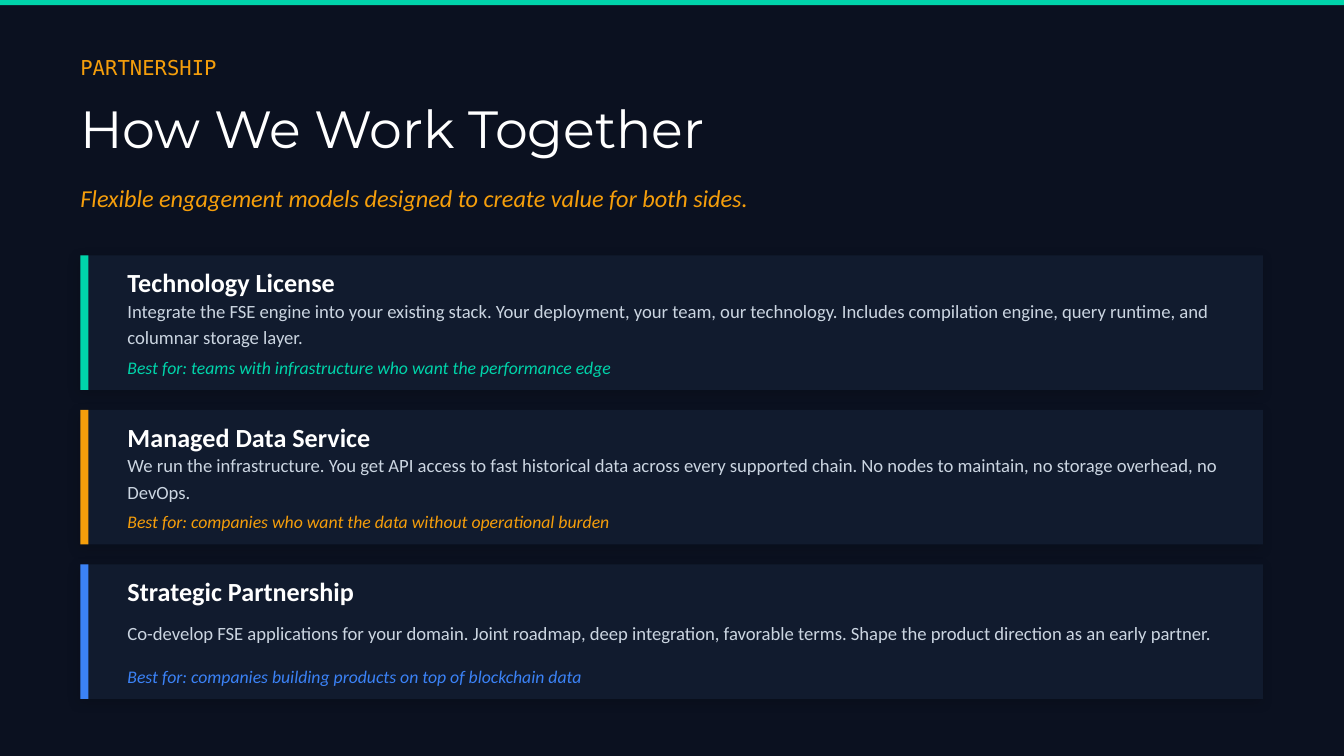
"""Build the partnership slide with its three engagement models."""
from typing import NamedTuple

from lxml import etree
from pptx import Presentation
from pptx import util as u
from pptx.dml.color import RGBColor
from pptx.enum import shapes, text
from pptx.oxml.ns import qn

Cm = u.Cm
TEAL, AMBER, BLUE = "00D4AA", "F59E0B", "3B82F6"
NIGHT, PANEL, WHITE, PALE = "0B1120", "111B2E", "FFFFFF", "CBD5E1"
LEFT, WIDE = 1.52, 22.35
TOP, HIGH, STEP = 4.83, 2.54, 2.92


class Box(NamedTuple):
    left: float
    top: float
    width: float
    height: float


class Model(NamedTuple):
    name: str
    about: str
    best: str
    color: str


MODELS = [
    Model(
        "Technology License",
        "Integrate the FSE engine into your existing stack. Your deployment, your team, "
        "our technology. Includes compilation engine, query runtime, and columnar storage layer.",
        "Best for: teams with infrastructure who want the performance edge",
        TEAL,
    ),
    Model(
        "Managed Data Service",
        "We run the infrastructure. You get API access to fast historical data across every "
        "supported chain. No nodes to maintain, no storage overhead, no DevOps.",
        "Best for: companies who want the data without operational burden",
        AMBER,
    ),
    Model(
        "Strategic Partnership",
        "Co-develop FSE applications for your domain. Joint roadmap, deep integration, "
        "favorable terms. Shape the product direction as an early partner.",
        "Best for: companies building products on top of blockchain data",
        BLUE,
    ),
]


def paint(fmt, color: str) -> None:
    """Set a solid fill from a hex string."""
    fmt.solid()
    fmt.fore_color.rgb = RGBColor.from_string(color)


def place(shape, box: Box) -> None:
    """Move and size a shape to a box in centimetres."""
    shape.left, shape.top, shape.width, shape.height = map(Cm, box)


def write(slide, words: str, box: Box, *, size: float, color: str, font: str = "Calibri",
          bold: bool = False, italic: bool = False, line: float = 1.0, shape=None) -> None:
    """Write one formatted paragraph in a new text box or a given shape."""
    shape = shape or slide.shapes.add_textbox(0, 0, 0, 0)
    place(shape, box)
    frame = shape.text_frame
    frame.word_wrap = True
    frame.auto_size = text.MSO_AUTO_SIZE.NONE
    frame.vertical_anchor = text.MSO_ANCHOR.MIDDLE
    frame.margin_left = frame.margin_right = frame.margin_top = frame.margin_bottom = 0
    para = frame.paragraphs[0]
    para.alignment = text.PP_ALIGN.LEFT
    para.line_spacing = line
    run = para.add_run()
    run.text = words
    run.font.name, run.font.size = font, u.Pt(size)
    run.font.bold, run.font.italic = bold, italic
    paint(run.font.fill, color)


def block(slide, box: Box, color: str):
    """Draw a plain filled rectangle and return it."""
    shape = slide.shapes.add_shape(shapes.MSO_SHAPE.RECTANGLE, 0, 0, 0, 0)
    place(shape, box)
    paint(shape.fill, color)
    shape.line.fill.background()
    shape.shadow.inherit = False
    return shape


def shade(shape) -> None:
    """Give a shape a soft black outer shadow."""
    effect = shape._element.spPr.find(qn("a:effectLst"))
    outer = etree.SubElement(effect, qn("a:outerShdw"), blurRad=str(u.Pt(6)),
                             dist=str(u.Pt(2)), dir=str(135 * 60000),
                             algn="bl", rotWithShape="0")
    tint = etree.SubElement(outer, qn("a:srgbClr"), val="000000")
    etree.SubElement(tint, qn("a:alpha"), val="15000")


def card(slide, model: Model, top: float) -> None:
    """Draw one engagement model as a panel with an accent edge."""
    shade(block(slide, Box(LEFT, top, WIDE, HIGH), PANEL))
    block(slide, Box(LEFT, top, 0.15, HIGH), model.color)
    left, width = 2.41, 20.83
    write(slide, model.name, Box(left, top + 0.13, width, 0.76),
          size=14, color=WHITE, bold=True)
    write(slide, model.about, Box(left, top + 0.81, width, 0.89),
          size=10, color=PALE, line=1.2)
    write(slide, model.best, Box(left, top + 1.83, width, 0.56),
          size=9.5, color=model.color, italic=True)


def main() -> None:
    """Build and save the slide."""
    deck = Presentation()
    deck.slide_width, deck.slide_height = Cm(25.4), Cm(14.29)
    slide = deck.slides.add_slide(deck.slide_layouts[5])
    paint(slide.background.fill, NIGHT)
    block(slide, Box(0, 0, 25.4, 0.1), TEAL)
    write(slide, "PARTNERSHIP", Box(LEFT, 0.76, 20.32, 1.02),
          size=11, color=AMBER, font="DejaVu Sans Mono")
    write(slide, "How We Work Together", Box(LEFT, 1.65, WIDE, 1.52),
          size=28, color=WHITE, font="Montserrat", shape=slide.shapes.title)
    write(slide, "Flexible engagement models designed to create value for both sides.",
          Box(LEFT, 3.3, 20.32, 0.89), size=13, color=AMBER, italic=True)
    for row, model in enumerate(MODELS):
        card(slide, model, TOP + row * STEP)
    deck.save("out.pptx")


if __name__ == "__main__":
    main()
